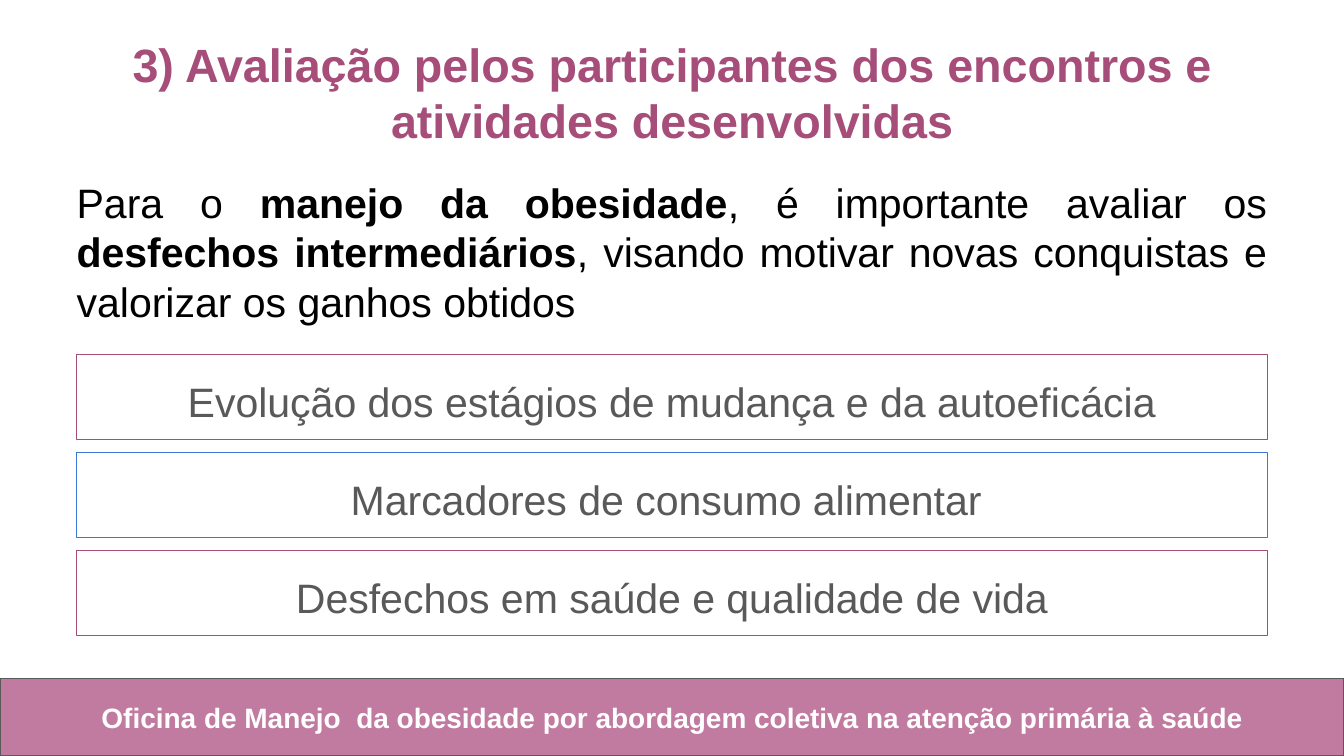
from pptx import Presentation
from pptx.dml.color import RGBColor
from pptx.enum.shapes import MSO_SHAPE
from pptx.enum.text import MSO_ANCHOR, MSO_AUTO_SIZE, PP_ALIGN
from pptx.util import Pt

PLUM = "A64D79"
BLUE = "3C78D8"
PINK = "C27BA0"
GRAY = "595959"
WHITE = "FFFFFF"
BLACK = "000000"

TITLE = "3) Avaliação pelos participantes dos encontros e atividades desenvolvidas"
FOOTER = "Oficina de Manejo  da obesidade por abordagem coletiva na atenção primária à saúde"
INTRODUCTION = [
    ("Para o ", False),
    ("manejo da obesidade", True),
    (", é importante avaliar os ", False),
    ("desfechos intermediários", True),
    (", visando motivar novas conquistas e valorizar os ganhos obtidos", False),
]
OUTCOMES = [
    ("Evolução dos estágios de mudança e da autoeficácia", PLUM),
    ("Marcadores de consumo alimentar ", BLUE),
    ("Desfechos em saúde e qualidade de vida", PLUM),
]


def color(value):
    """Turn a hex string into a colour."""
    return RGBColor.from_string(value)


def write_text(shape, runs, size, font_color, alignment, anchor=MSO_ANCHOR.TOP):
    """Fill a shape with one paragraph of (text, bold) runs and return it."""
    frame = shape.text_frame
    frame.word_wrap = True
    frame.auto_size = MSO_AUTO_SIZE.NONE
    frame.vertical_anchor = anchor
    frame.margin_left = frame.margin_right = Pt(7.2)
    frame.margin_top = frame.margin_bottom = Pt(7.2)
    paragraph = frame.paragraphs[0]
    paragraph.alignment = alignment
    for text, bold in runs:
        run = paragraph.add_run()
        run.text = text
        run.font.name = "Arial"
        run.font.size = Pt(size)
        run.font.bold = bold
        run.font.color.rgb = color(font_color)
    return paragraph


def add_title(slide):
    """Place and format the title placeholder."""
    title = slide.shapes.title
    title.left, title.top = Pt(21), Pt(12.2)
    title.width, title.height = Pt(678), Pt(68.4)
    write_text(title, [(TITLE, True)], 25, PLUM, PP_ALIGN.CENTER)


def add_text(slide, left, top, width, height, runs, size, font_color, alignment):
    """Add a wrapped text box."""
    box = slide.shapes.add_textbox(Pt(left), Pt(top), Pt(width), Pt(height))
    write_text(box, runs, size, font_color, alignment)


def add_rectangle(slide, left, top, width, height, line_color, fill=None):
    """Add an outlined rectangle, filled only when a colour is given."""
    shape = slide.shapes.add_shape(
        MSO_SHAPE.RECTANGLE, Pt(left), Pt(top), Pt(width), Pt(height)
    )
    shape.shadow.inherit = False
    shape.line.color.rgb = color(line_color)
    shape.line.width = Pt(0.75)
    if fill:
        shape.fill.solid()
        shape.fill.fore_color.rgb = color(fill)
    else:
        shape.fill.background()
    return shape


def add_outcomes(slide):
    """Stack the outcome boxes at equal steps."""
    for index, (text, line_color) in enumerate(OUTCOMES):
        box = add_rectangle(slide, 41, 190 + index * 52.5, 638, 45.4, line_color)
        paragraph = write_text(
            box, [(text, False)], 22, GRAY, PP_ALIGN.CENTER, MSO_ANCHOR.MIDDLE
        )
        paragraph.line_spacing = 1.15


def add_footer(slide):
    """Add the footer band and its caption."""
    add_rectangle(slide, 0, 363.6, 720, 41.4, GRAY, PINK)
    add_text(slide, 24.3, 368, 672, 32.4, [(FOOTER, True)], 15, WHITE, PP_ALIGN.CENTER)


def main():
    """Build and save the slide."""
    presentation = Presentation()
    presentation.slide_width, presentation.slide_height = Pt(720), Pt(405)
    slide = presentation.slides.add_slide(presentation.slide_layouts[5])
    add_footer(slide)
    add_title(slide)
    add_text(slide, 34, 88, 652, 94.3, INTRODUCTION, 22, BLACK, PP_ALIGN.JUSTIFY)
    add_outcomes(slide)
    presentation.save("out.pptx")


if __name__ == "__main__":
    main()
